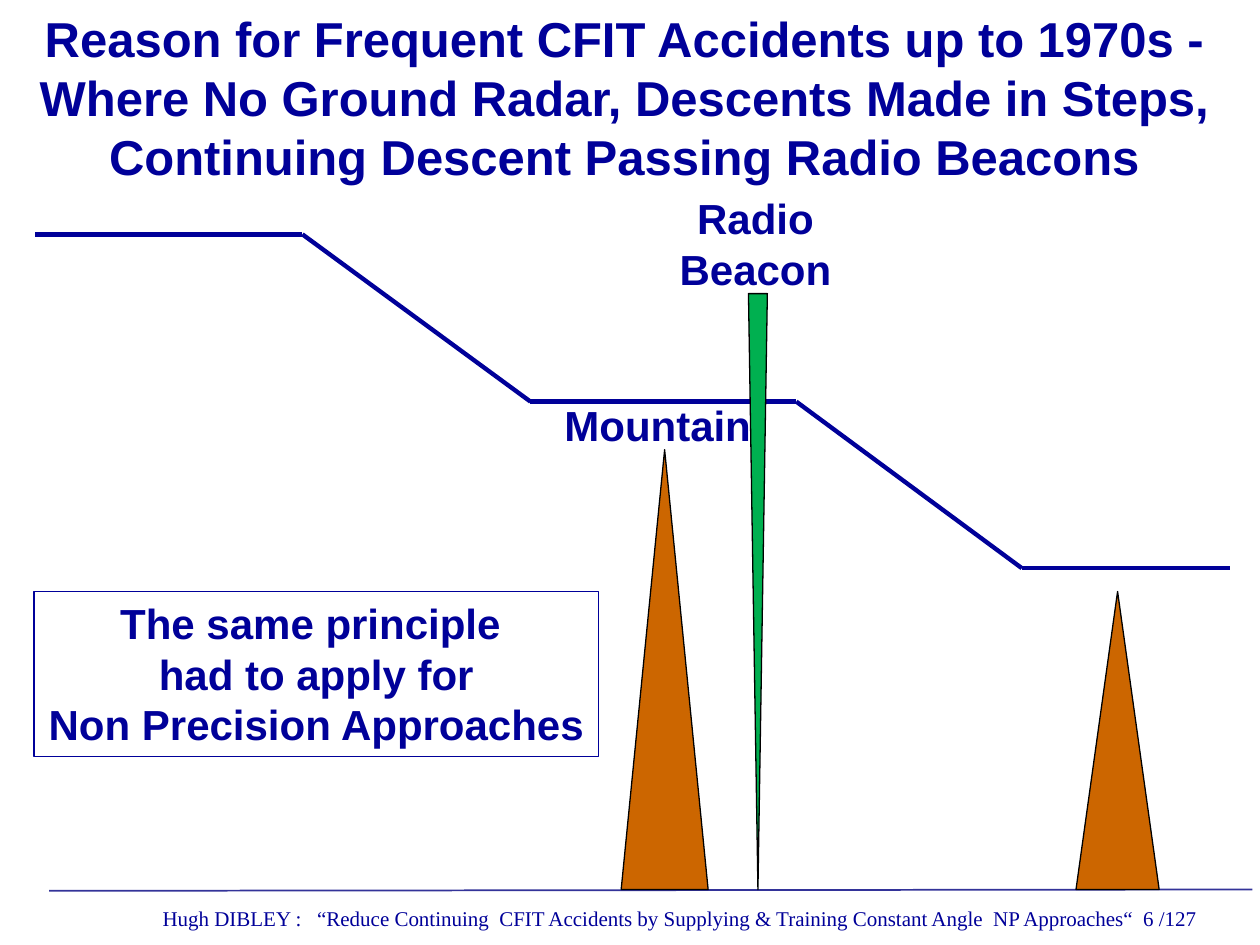
"""Build the slide on stepped descents over mountains and a radio beacon."""
from itertools import pairwise

from lxml import etree
from pptx import Presentation
from pptx.dml.color import RGBColor
from pptx.enum.shapes import MSO_CONNECTOR, MSO_SHAPE
from pptx.enum.text import MSO_ANCHOR, PP_ALIGN
from pptx.oxml.ns import qn
from pptx.util import Inches, Pt

STRAIGHT = MSO_CONNECTOR.STRAIGHT
TRIANGLE, RECTANGLE = MSO_SHAPE.ISOSCELES_TRIANGLE, MSO_SHAPE.RECTANGLE
TOP, CENTER, LEFT = MSO_ANCHOR.TOP, PP_ALIGN.CENTER, PP_ALIGN.LEFT
COLORS = {name: RGBColor.from_string(value) for name, value in {
    "navy": "000099", "rule": "333399", "mountain": "CC6600",
    "beacon": "00B050", "outline": "000000"}.items()}

prs = Presentation()
prs.slide_width, prs.slide_height = Inches(10), Inches(7.5)
COL, ROW = prs.slide_width / 100, prs.slide_height / 100
GROUND = 94.13
s = prs.slides.add_slide(prs.slide_layouts[5])


def add_line(start, end, color, width):
    cx = s.shapes.add_connector(
        STRAIGHT, int(start[0] * COL), int(start[1] * ROW),
        int(end[0] * COL), int(end[1] * ROW))
    cx.line.color.rgb = COLORS[color]
    cx.line.width = Pt(width)
    etree.SubElement(cx._element.spPr, qn("a:effectLst"))


def write(sp, lines, size, font="Arial", bold=True, align=CENTER, wrap=True):
    tf = sp.text_frame
    tf.word_wrap = wrap
    tf.vertical_anchor = TOP
    tf.text = "\n".join(lines)
    for p in tf.paragraphs:
        p.alignment = align
        p.font.name = font
        p.font.size = Pt(size)
        p.font.bold = bold
        p.font.color.rgb = COLORS["navy"]


title = s.shapes.title
title.left, title.top = int(1.6 * COL), int(0.27 * ROW)
title.width, title.height = int(95.9 * COL), int(20.13 * ROW)
write(title, ["Reason for Frequent CFIT Accidents up to 1970s -",
              "Where No Ground Radar, Descents Made in Steps,",
              "Continuing Descent Passing Radio Beacons"], 28, wrap=False)

footer = s.shapes.add_textbox(
    int(4 * COL), int(95.2 * ROW), int(96 * COL), int(4 * ROW))
footer.text_frame.margin_left = int(8.9 * COL)
write(footer, ["Hugh DIBLEY :   “Reduce Continuing  CFIT Accidents by Supplying "
               "& Training Constant Angle  NP Approaches“  6 /127"],
      12, "Times New Roman", False, LEFT)
add_line((3.9, 94.27), (99.4, GROUND), "rule", 1)

descent = [(2.8, 24.8), (24, 24.8), (42.1, 42.5),
           (63.2, 42.5), (81.1, 60.13), (97.6, 60.13)]
for start, end in pairwise(descent):
    add_line(start, end, "navy", 2.5)

for left, top, width, color, rotation in [
        (49.3, 47.6, 6.9, "mountain", 0),
        (59.4, 31.07, 1.5, "beacon", 180),
        (85.4, 62.6, 6.6, "mountain", 0)]:
    sp = s.shapes.add_shape(TRIANGLE, int(left * COL), int(top * ROW),
                            int(width * COL), int((GROUND - top) * ROW))
    sp.rotation = rotation
    sp.shadow.inherit = False
    sp.fill.solid()
    sp.fill.fore_color.rgb = COLORS[color]
    sp.line.color.rgb = COLORS["outline"]
    sp.line.width = Pt(0.75)

for text, left, top, width, height in [
        ("Radio Beacon", 51.7, 19.73, 16.5, 12.13),
        ("Mountain", 43.7, 41.6, 17, 6.67)]:
    label = s.shapes.add_textbox(int(left * COL), int(top * ROW),
                                 int(width * COL), int(height * ROW))
    write(label, [text], 24)

note = s.shapes.add_shape(RECTANGLE, int(2.7 * COL), int(62.6 * ROW),
                          int(44.8 * COL), int(17.5 * ROW))
note.shadow.inherit = False
note.fill.background()
note.line.color.rgb = COLORS["navy"]
note.line.width = Pt(0.75)
write(note, ["The same principle ", "had to apply for",
             "Non Precision Approaches"], 24)

prs.save("out.pptx")
